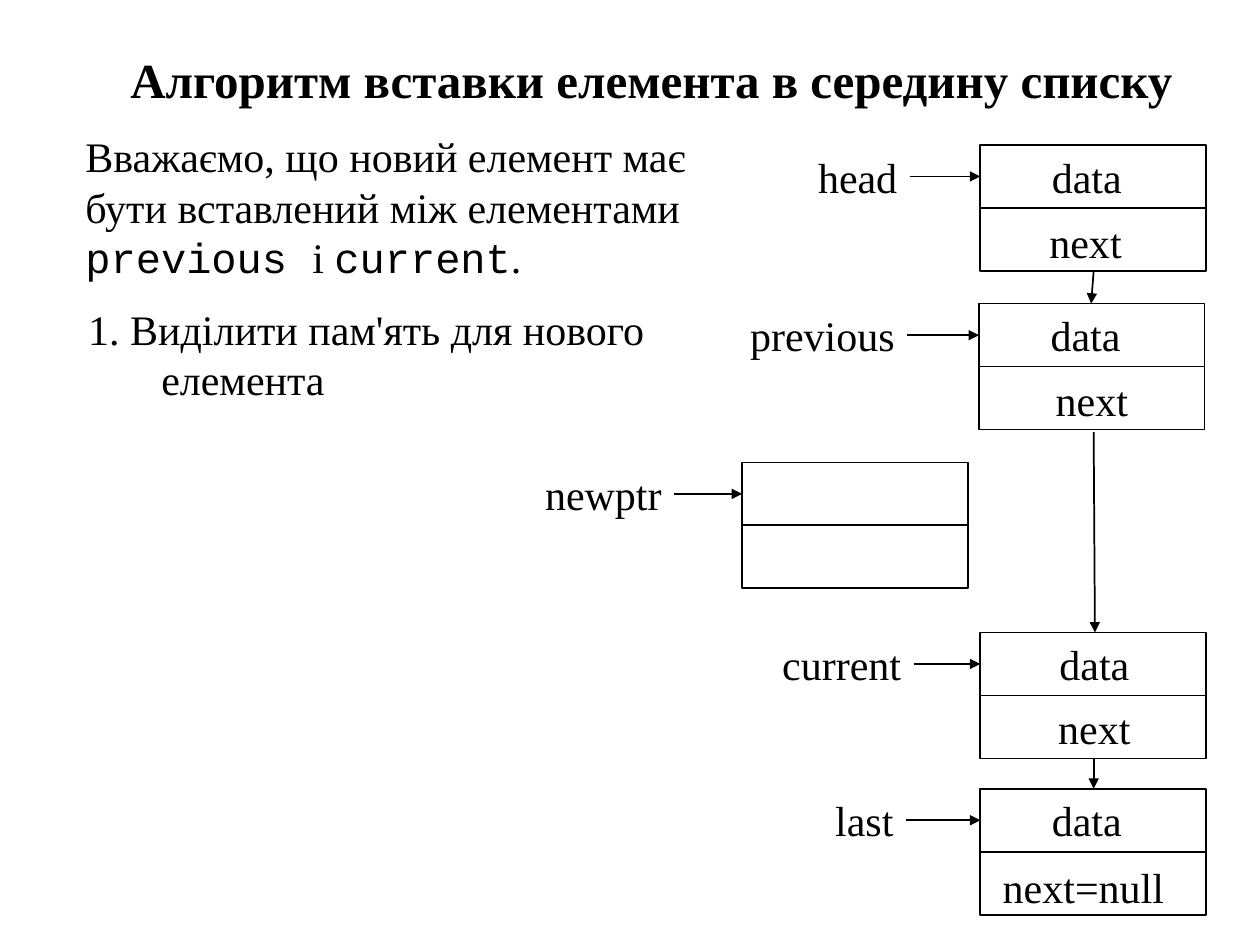
from lxml.etree import SubElement
from pptx import Presentation
from pptx.dml.color import RGBColor
from pptx.enum.shapes import MSO_CONNECTOR as CONN, MSO_SHAPE as SHAPE
from pptx.enum.text import MSO_ANCHOR as ANCHOR, MSO_AUTO_SIZE as AUTO, PP_ALIGN as ALIGN
from pptx.oxml.ns import qn
from pptx.util import Inches, Pt

SERIF, MONO = "Times New Roman", "Courier New"
BLACK = "000000"
CELL_W, CELL_H = 1.79, 0.5

# pointer name, label left, arrow start, node left, node top,
# then (text, left, width, drop) for each filled field
NODES = [
    ("head", 6.39, 7.22, 7.78, 1.15,
     [("data", 8.25, 0.76, 0), ("next", 8.23, 0.78, 0.02)]),
    ("previous", 5.84, 7.2, 7.77, 2.41,
     [("data", 8.24, 0.76, 0), ("next", 8.28, 0.78, 0.01)]),
    ("newptr", 4.21, 5.35, 5.89, 3.67, []),
    ("current", 6.1, 7.25, 7.78, 5.02,
     [("data", 8.31, 0.76, 0), ("next", 8.3, 0.78, 0.01)]),
    ("last", 6.52, 7.19, 7.78, 6.26,
     [("data", 8.25, 0.76, 0), ("next=null", 7.86, 1.49, 0.03)]),
]
# start and end of the links between nodes
LINKS = [(8.68, 2.15, 8.66, 2.41), (8.68, 3.43, 8.69, 5.02), (8.68, 6.02, 8.68, 6.26)]


def color(value):
    return RGBColor.from_string(value)


def set_attrs(obj, values):
    for name, value in values.items():
        setattr(obj, name, value)


def add_run(p, text, font=SERIF, size=24, bold=False):
    r = p.add_run()
    r.text = text
    set_attrs(r.font, {"name": font, "size": Pt(size), "bold": bold})
    r.font.color.rgb = color(BLACK)


def add_text(s, box, runs, wrap=False, align=ALIGN.LEFT):
    sp = s.shapes.add_textbox(*map(Inches, box))
    tf = sp.text_frame
    set_attrs(tf, {"word_wrap": wrap, "auto_size": AUTO.NONE})
    p = tf.paragraphs[0]
    p.alignment = align
    for run in runs:
        add_run(p, *run)
    return sp


def add_cell(s, x, y):
    sp = s.shapes.add_shape(SHAPE.RECTANGLE, *map(Inches, (x, y, CELL_W, CELL_H)))
    sp.shadow.inherit = False
    sp.fill.background()
    sp.line.color.rgb = color(BLACK)
    sp.line.width = Pt(1)


def add_arrow(s, *ends):
    line = s.shapes.add_connector(CONN.STRAIGHT, *map(Inches, ends))
    line.line.color.rgb = color(BLACK)
    line.line.width = Pt(1)
    SubElement(line.line._get_or_add_ln(), qn("a:tailEnd"), type="triangle")
    SubElement(line._element.spPr, qn("a:effectLst"))


def add_node(s, name, label_x, arrow_x, x, y, fields):
    for row in range(2):
        add_cell(s, x, y + row * CELL_H)
    for row, (text, left, width, drop) in enumerate(fields):
        add_text(s, (left, y + row * CELL_H + drop, width, CELL_H), [(text,)])
    # pointer label and its arrow
    add_text(s, (label_x, y, arrow_x - label_x, CELL_H), [(name,)], align=ALIGN.RIGHT)
    middle = y + CELL_H / 2
    add_arrow(s, arrow_x, middle, x, middle)


def add_title(s, text):
    sp = s.shapes.title
    set_attrs(sp, dict(zip(("left", "top", "width", "height"),
                           map(Inches, (0.75, 0.25, 8.84, 0.75)))))
    tf = sp.text_frame
    set_attrs(tf, {"vertical_anchor": ANCHOR.MIDDLE, "word_wrap": True,
                   "auto_size": AUTO.NONE})
    p = tf.paragraphs[0]
    p.alignment = ALIGN.CENTER
    add_run(p, text, size=28, bold=True)


def add_step(s, text):
    sp = add_text(s, (0, 2.36, 6.18, 1), [(text,)], wrap=True)
    set_attrs(sp.text_frame, {"margin_left": Inches(0.2), "margin_right": Inches(0.2)})
    p = sp.text_frame.paragraphs[0]
    p.space_before = Pt(4.8)
    # hanging indent
    pPr = p._p.get_or_add_pPr()
    pPr.set("marL", str(Inches(1.08)))
    pPr.set("indent", str(Inches(-0.58)))


def main():
    prs = Presentation()
    prs.slide_width, prs.slide_height = Inches(10), Inches(7.5)
    s = prs.slides.add_slide(prs.slide_layouts[5])

    # Explanation
    add_title(s, "Алгоритм вставки елемента в середину списку")
    add_text(s, (0.58, 0.99, 5, 1.31), [
        ("Вважаємо, що новий елемент має бути вставлений між елементами ",),
        ("previous ", MONO), ("і ",), ("current", MONO), (".",)], wrap=True)
    add_step(s, "1. Виділити пам'ять для нового елемента")

    # Linked list
    for node in NODES:
        add_node(s, *node)
    for link in LINKS:
        add_arrow(s, *link)

    prs.save("out.pptx")


if __name__ == "__main__":
    main()
